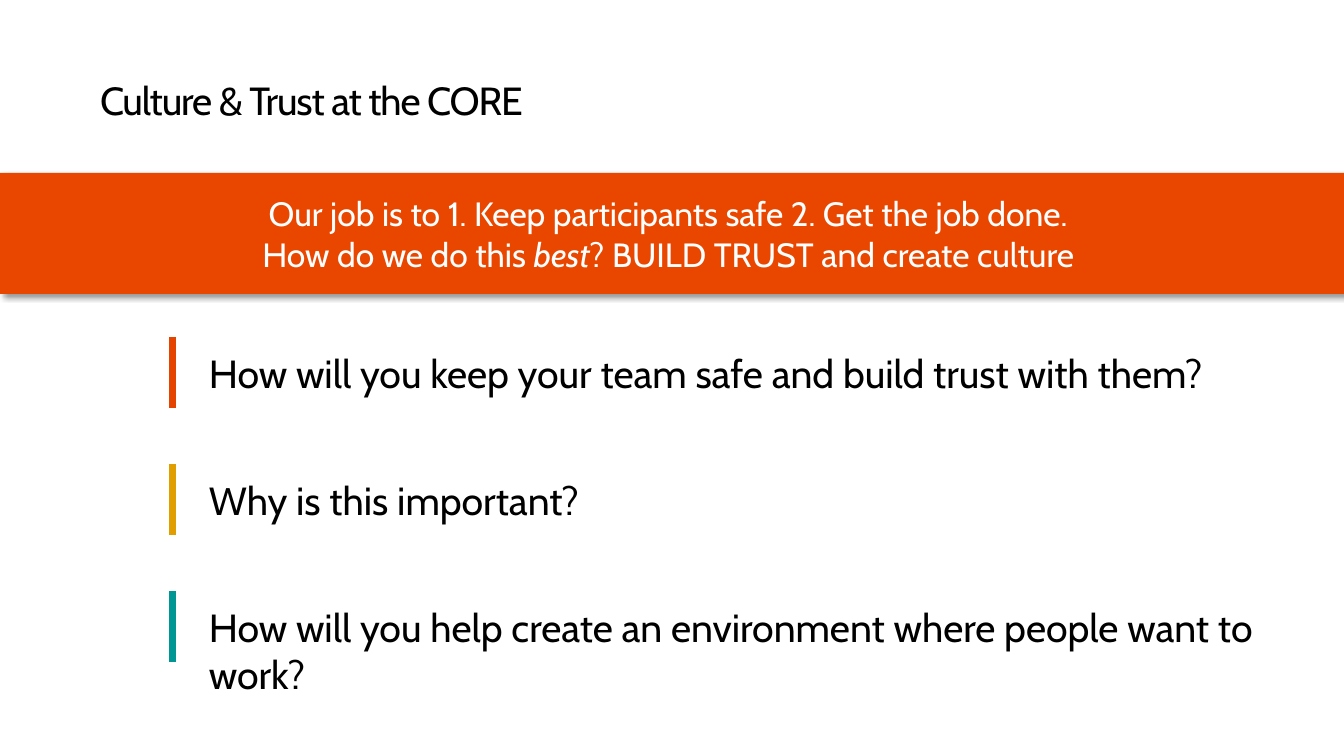
from lxml import etree
from pptx import Presentation, util as u
from pptx.dml.color import RGBColor
from pptx.enum import shapes, text
from pptx.oxml import parse_xml
from pptx.oxml.ns import nsdecls, qn

BLACK = RGBColor(0x00, 0x00, 0x00)
WHITE = RGBColor(0xFF, 0xFF, 0xFF)
BAND = RGBColor(0xE9, 0x46, 0x00)
RED = RGBColor(0xE4, 0x44, 0x00)
GOLD = RGBColor(0xE1, 0x9E, 0x00)
TEAL = RGBColor(0x00, 0x96, 0x93)

SHADOW = f"""<a:effectLst {nsdecls("a")}>
  <a:outerShdw blurRad="50800" dist="38100" dir="2700000" algn="tl" rotWithShape="0">
    <a:srgbClr val="000000"><a:alpha val="40000"/></a:srgbClr>
  </a:outerShdw>
</a:effectLst>"""


def px(n):
    return u.Emu(round(n * 914400 / 100.8))


class Deck:
    font = "Cabin"

    def __init__(self, wide, high):
        self.prs = Presentation()
        self.prs.slide_width, self.prs.slide_height = px(wide), px(high)
        self.slide = self.prs.slides.add_slide(self.prs.slide_layouts[6])

    def fill_text(self, frame, lines, size=28, color=BLACK, align=None,
                  space=None, track=None):
        """Fill a frame; each line is a list of (words, italic) runs."""
        for i, runs in enumerate(lines):
            para = frame.paragraphs[0] if i == 0 else frame.add_paragraph()
            para.alignment, para.line_spacing = align, space
            for words, slant in runs:
                run = para.add_run()
                run.text = words
                font = run.font
                font.name, font.size = self.font, u.Pt(size)
                font.color.rgb = color
                font.italic = slant
                if track is not None:
                    run._r.get_or_add_rPr().set("spc", str(round(track * 100)))

    def label(self, x, y, w, h, words, wrap=True, **style):
        box = self.slide.shapes.add_textbox(px(x), px(y), px(w), px(h))
        frame = box.text_frame
        frame.word_wrap = wrap
        self.fill_text(frame, [[(words, None)]], **style)
        return frame

    def band(self, x, y, w, h, fill, lines, **style):
        box = self.slide.shapes.add_shape(
            shapes.MSO_SHAPE.RECTANGLE, px(x), px(y), px(w), px(h))
        box.fill.solid()
        box.fill.fore_color.rgb = fill
        box.line.fill.background()
        box._element.spPr.append(parse_xml(SHADOW))
        box.text_frame.vertical_anchor = text.MSO_ANCHOR.MIDDLE
        self.fill_text(box.text_frame, lines, **style)

    def rule(self, x, y, h, color):
        line = self.slide.shapes.add_connector(
            shapes.MSO_CONNECTOR.STRAIGHT, px(x), px(y), px(x), px(y + h))
        line.line.color.rgb = color
        line.line.width = u.Pt(5)
        etree.SubElement(line._element.spPr, qn("a:effectLst"))


def main():
    deck = Deck(1344, 756)
    title = deck.label(100, 58, 1142, 66, "Culture & Trust at the CORE",
                       space=0.9, track=-0.8)
    title.vertical_anchor = text.MSO_ANCHOR.BOTTOM
    title.margin_left = title.margin_right = title.margin_bottom = 0

    deck.band(0, 173, 1344, 121, BAND, [
        [("Our job is to 1. Keep participants safe 2. Get the job done. ", None)],
        [("How do we do this ", None), ("best", True),
         ("? BUILD TRUST and create culture ", None)],
    ], size=24, color=WHITE, align=text.PP_ALIGN.CENTER)

    asks = [
        ("How will you keep your team safe and build trust with them?",
         1018, 57, False, RED),
        ("Why is this important?", 397, 57, False, GOLD),
        ("How will you help create an environment where people want to work?",
         1100, 105, True, TEAL),
    ]
    for i, (words, w, h, wrap, color) in enumerate(asks):
        top = 337 + 127 * i
        frame = deck.label(199, top + 7, w, h, words, wrap=wrap)
        frame.auto_size = text.MSO_AUTO_SIZE.SHAPE_TO_FIT_TEXT
        deck.rule(173, top, 71, color)

    deck.prs.save("out.pptx")


if __name__ == "__main__":
    main()
